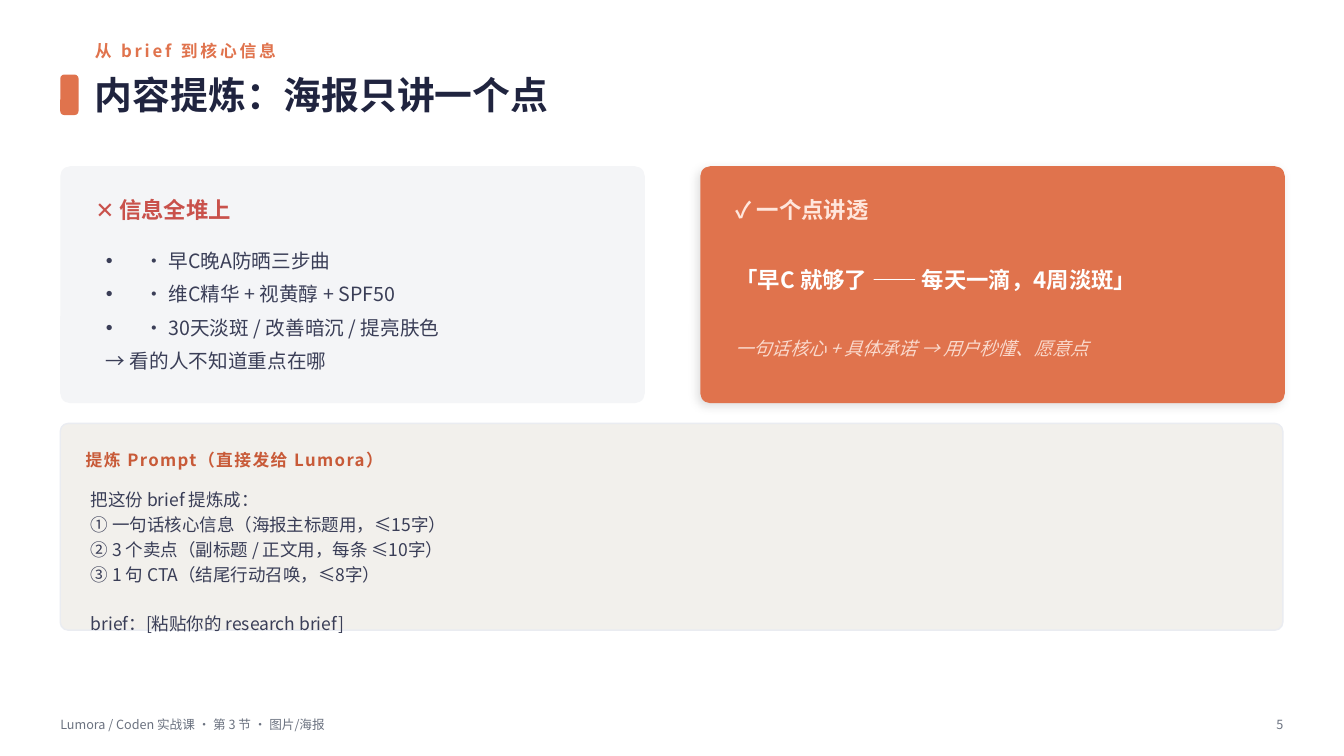
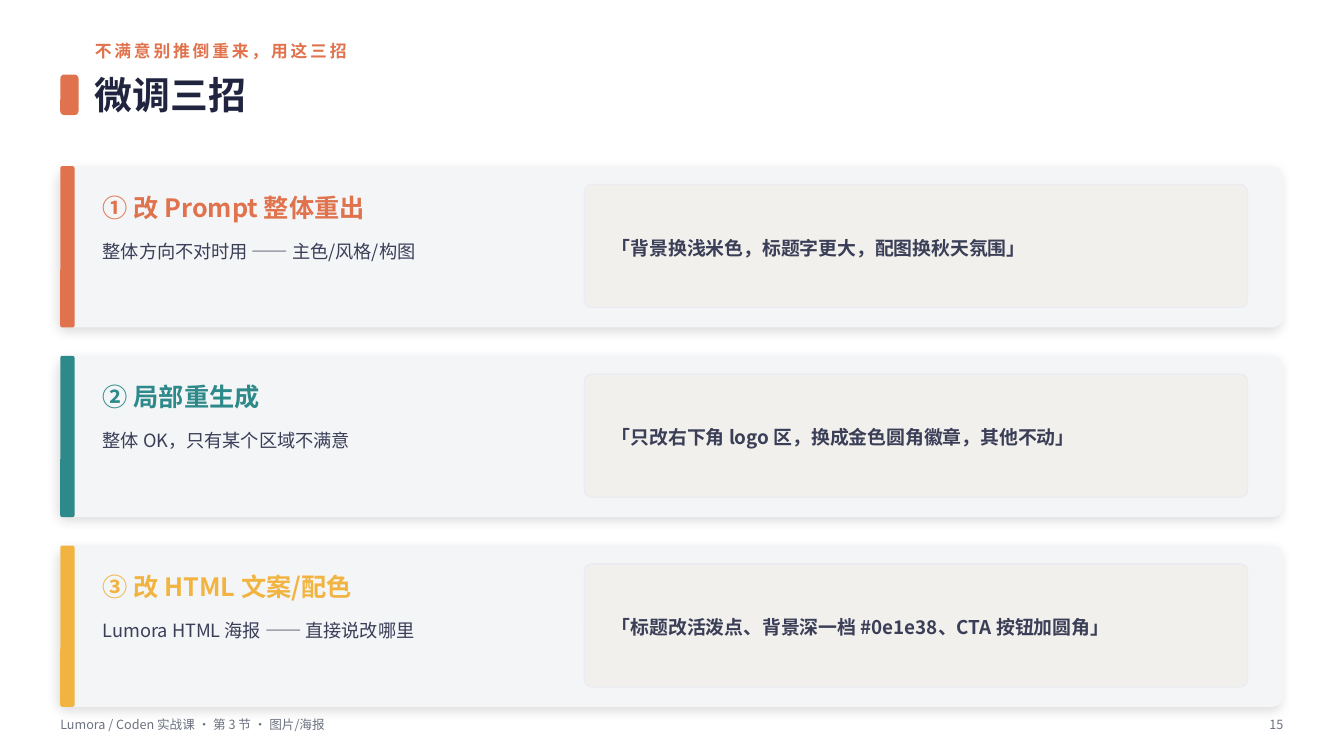
import pptx
import pptx.dml.color
import pptx.enum.shapes
import pptx.enum.text
import pptx.oxml
import pptx.oxml.ns
import pptx.util
from pptx.util import Cm

FONT = "Noto Sans CJK SC"
ORANGE, TEAL, YELLOW = "E0734D", "2E8A8A", "F2B441"
NAVY, INK, GREY = "20243F", "3A3E57", "6B7280"
RED, RUST, PEACH, BLUSH = "C9514B", "C85A38", "FFE6DC", "FAD9CC"
WHITE, CARD, PAPER, PAPER_EDGE = "FFFFFF", "F4F5F7", "F2F0EC", "EAECF1"

LEFT, TOP, WIDTH = 1.52, 4.19, 30.81
TITLE_LEFT, TITLE_WIDTH = 2.39, 29.95
FOOTER = "Lumora / Coden 实战课 · 第 3 节 · 图片/海报"
LAYOUT_WITH_LIST, LAYOUT_TITLE_ONLY = 1, 5


def color(hex_text):
    return pptx.dml.color.RGBColor.from_string(hex_text)


def add_xml(parent, tag, **attributes):
    child = pptx.oxml.parse_xml(f"<a:{tag} {pptx.oxml.ns.nsdecls('a')}/>")
    for name, value in attributes.items():
        child.set(name, str(value))
    parent.append(child)
    return child


class DeckBuilder:
    """Holds the deck, its style and the slide being filled; lengths are in cm."""

    def __init__(self):
        self.deck = pptx.Presentation()
        self.deck.slide_width = Cm(33.87)
        self.deck.slide_height = Cm(19.05)
        self.slide = None

    def start_slide(self, layout, kicker, title, number):
        self.slide = self.deck.slides.add_slide(self.deck.slide_layouts[layout])
        self.text(TITLE_LEFT, 0.91, TITLE_WIDTH, 0.76, kicker, 12, ORANGE, bold=True, tracking=2)
        self.panel(LEFT, 1.88, 0.46, 1.02, ORANGE, 0.1)
        heading = self.slide.shapes.title
        self.place(heading, TITLE_LEFT, 1.63, TITLE_WIDTH, 1.52)
        self.set_text(heading, [title], 27, NAVY, bold=True)
        self.text(LEFT, 17.88, 22.86, 0.76, FOOTER, 9, GREY)
        page = self.text(30.56, 17.88, 1.78, 0.76, number, 9, GREY)
        page.text_frame.paragraphs[0].alignment = pptx.enum.text.PP_ALIGN.RIGHT

    def place(self, shape, left, top, width, height):
        """Move a placeholder and bring it in front of what is already drawn."""
        shape.left, shape.top = Cm(left), Cm(top)
        shape.width, shape.height = Cm(width), Cm(height)
        shape.element.getparent().append(shape.element)

    def set_text(self, shape, lines, size, hex_text, bold=False, italic=False, tracking=0,
                 spacing=1, anchor=pptx.enum.text.MSO_ANCHOR.MIDDLE, inset=0):
        frame = shape.text_frame
        frame.text = "\n".join(lines)
        frame.word_wrap = True
        frame.auto_size = pptx.enum.text.MSO_AUTO_SIZE.NONE
        frame.vertical_anchor = anchor
        frame.margin_left = Cm(inset)
        frame.margin_top = frame.margin_right = frame.margin_bottom = 0
        for para in frame.paragraphs:
            para.alignment = pptx.enum.text.PP_ALIGN.LEFT
            para.line_spacing = spacing
            para.space_before = pptx.util.Pt(0)
            for span in para.runs:
                font = span.font
                font.name, font.size = FONT, pptx.util.Pt(size)
                font.bold, font.italic = bold, italic
                font.color.rgb = color(hex_text)
                properties = span._r.get_or_add_rPr()
                add_xml(properties, "ea", typeface=FONT)
                if tracking:
                    properties.set("spc", str(tracking * 100))

    def text(self, left, top, width, height, content, size, hex_text, **style):
        box = self.slide.shapes.add_textbox(Cm(left), Cm(top), Cm(width), Cm(height))
        lines = [content] if isinstance(content, str) else content
        self.set_text(box, lines, size, hex_text, **style)
        return box

    def panel(self, left, top, width, height, fill, radius, line=None, shadow=False):
        panel = self.slide.shapes.add_shape(
            pptx.enum.shapes.MSO_SHAPE.ROUNDED_RECTANGLE,
            Cm(left), Cm(top), Cm(width), Cm(height))
        panel.adjustments[0] = radius / min(width, height)
        panel.fill.solid()
        panel.fill.fore_color.rgb = color(fill)
        if line:
            panel.line.color.rgb = color(line)
            panel.line.width = pptx.util.Pt(1)
        else:
            panel.line.fill.background()
        panel.shadow.inherit = False
        if shadow:
            self.add_shadow(panel)
        return panel

    def add_shadow(self, shape):
        effects = shape.element.spPr.find(pptx.oxml.ns.qn("a:effectLst"))
        outer = add_xml(effects, "outerShdw", blurRad=pptx.util.Pt(7), dist=pptx.util.Pt(3),
                        dir=135 * 60000, algn="bl", rotWithShape=0)
        shade = add_xml(outer, "srgbClr", val="000000")
        add_xml(shade, "alpha", val=12000)

    def paper(self, left, top, width, height, radius):
        return self.panel(left, top, width, height, PAPER, radius, line=PAPER_EDGE)

    def bullet_list(self, left, top, width, height, bullets, conclusion):
        """Fill the body placeholder with bullets and one closing line without a bullet."""
        body = self.slide.placeholders[1]
        self.place(body, left, top, width, height)
        self.set_text(body, bullets + [conclusion], 14, INK,
                      anchor=pptx.enum.text.MSO_ANCHOR.TOP)
        indent = Cm(0.97)
        for index, para in enumerate(body.text_frame.paragraphs):
            para.space_after = pptx.util.Pt(7)
            properties = para._p.get_or_add_pPr()
            bulleted = index < len(bullets)
            properties.set("marL", str(indent if bulleted else 0))
            properties.set("indent", str(-indent if bulleted else 0))
            if bulleted:
                add_xml(properties, "buChar", char="•")
            else:
                add_xml(properties, "buNone")

    def comparison_card(self, left, heading, heading_color, fill, shadow=False):
        self.panel(left, TOP, 14.73, 5.97, fill, 0.25, shadow=shadow)
        self.text(left + 0.89, 4.7, 12.95, 1.14, heading, 16, heading_color, bold=True)

    def tip_row(self, top, accent, heading, usage, example):
        height = 4.06
        self.panel(LEFT, top, WIDTH, height, CARD, 0.25, shadow=True)
        self.panel(LEFT, top, 0.36, height, accent, 0.05)
        self.text(2.59, top + 0.46, 11.43, 1.14, heading, 18, accent, bold=True)
        self.text(2.59, top + 1.65, 11.43, 0.97, usage, 13, INK)
        example_box = self.paper(14.73, top + 0.46, 16.71, 3.1, 0.18)
        self.set_text(example_box, [example], 13.5, INK, bold=True, spacing=1.15, inset=0.64)


def build_message_slide(builder):
    builder.start_slide(LAYOUT_WITH_LIST, "从 brief 到核心信息", "内容提炼：海报只讲一个点", "5")

    builder.comparison_card(LEFT, "✕ 信息全堆上", RED, CARD)
    builder.bullet_list(
        2.67, 6.27, 12.57, 3.43,
        ["· 早C晚A防晒三步曲", "· 维C精华 + 视黄醇 + SPF50", "· 30天淡斑 / 改善暗沉 / 提亮肤色"],
        "→ 看的人不知道重点在哪")

    right = 17.65
    builder.comparison_card(right, "✓ 一个点讲透", PEACH, ORANGE, shadow=True)
    builder.text(right + 0.89, 6.17, 12.95, 1.65, "「早C 就够了 —— 每天一滴，4周淡斑」",
                 16, WHITE, bold=True, spacing=1.15)
    builder.text(right + 0.89, 8.13, 12.95, 1.27, "一句话核心 + 具体承诺 → 用户秒懂、愿意点",
                 13, BLUSH, italic=True)

    builder.paper(LEFT, 10.67, WIDTH, 5.21, 0.2)
    builder.text(2.16, 11.13, 29.54, 0.89, "提炼 Prompt（直接发给 Lumora）",
                 12, RUST, bold=True, tracking=1)
    prompt = builder.text(
        2.29, 12.24, 29.29, 3.18,
        ["把这份 brief 提炼成：",
         "① 一句话核心信息（海报主标题用，≤15字）",
         "② 3 个卖点（副标题 / 正文用，每条 ≤10字）",
         "③ 1 句 CTA（结尾行动召唤，≤8字）",
         "brief：[粘贴你的 research brief]"],
        12.5, INK, spacing=1.18, anchor=pptx.enum.text.MSO_ANCHOR.TOP)
    prompt.text_frame.paragraphs[-1].space_before = pptx.util.Pt(17.6)


def build_tips_slide(builder):
    builder.start_slide(LAYOUT_TITLE_ONLY, "不满意别推倒重来，用这三招", "微调三招", "15")
    tips = [
        (ORANGE, "① 改 Prompt 整体重出", "整体方向不对时用 —— 主色/风格/构图",
         "「背景换浅米色，标题字更大，配图换秋天氛围」"),
        (TEAL, "② 局部重生成", "整体 OK，只有某个区域不满意",
         "「只改右下角 logo 区，换成金色圆角徽章，其他不动」"),
        (YELLOW, "③ 改 HTML 文案/配色", "Lumora HTML 海报 —— 直接说改哪里",
         "「标题改活泼点、背景深一档 #0e1e38、CTA 按钮加圆角」"),
    ]
    for index, tip in enumerate(tips):
        builder.tip_row(TOP + index * 4.78, *tip)


def main():
    builder = DeckBuilder()
    build_message_slide(builder)
    build_tips_slide(builder)
    builder.deck.save("out.pptx")


if __name__ == "__main__":
    main()
